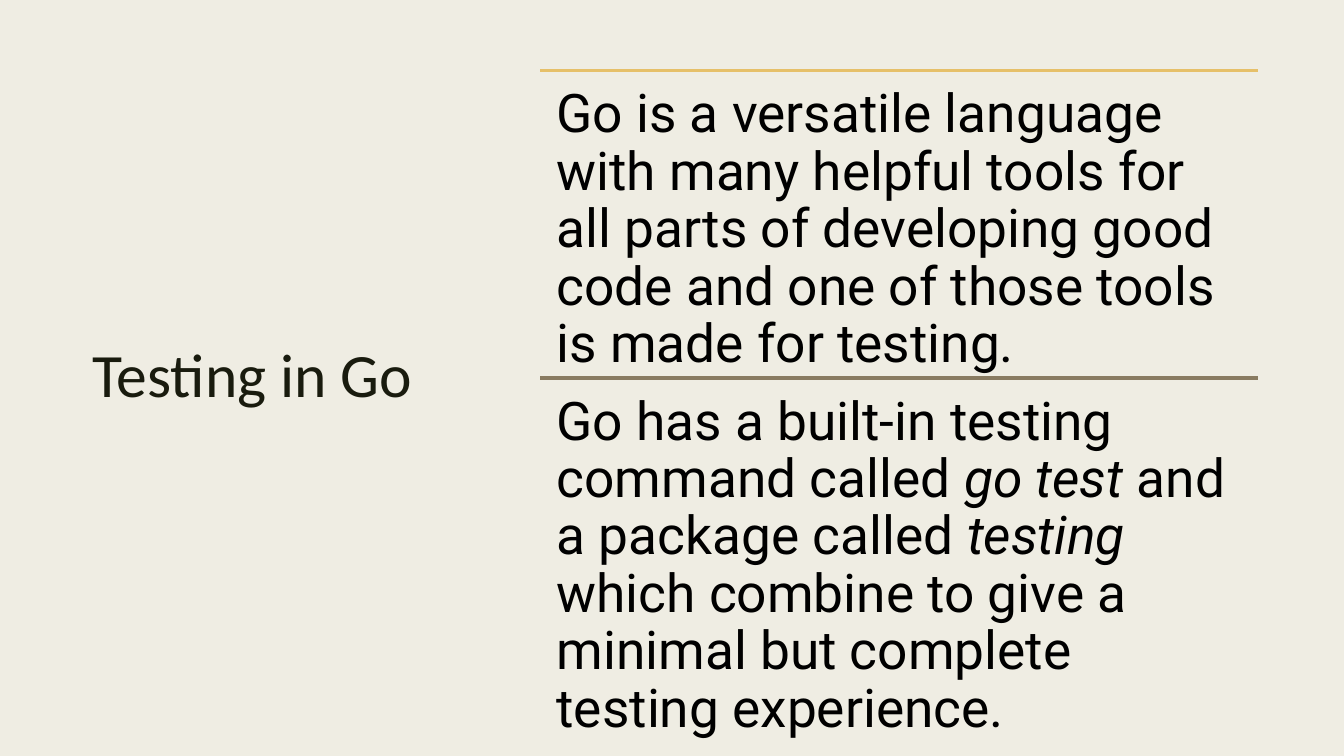
from lxml.etree import SubElement
from pptx import Presentation
from pptx.dml.color import RGBColor
from pptx.enum.shapes import MSO_CONNECTOR, MSO_SHAPE
from pptx.enum.text import MSO_ANCHOR, MSO_AUTO_SIZE, PP_ALIGN
from pptx.oxml.ns import qn
from pptx.util import Inches, Pt

COLORS = {
    "background": "EFEDE3",
    "title": "191B0E",
    "body": "000000",
    "gold": "E6C069",
    "brown": "897B61",
}
LEFT, TOP, WIDTH, HEIGHT = 5.36, 0.7, 7.12, 3.05
SECTIONS = [
    ("gold", [
        ("Go is a versatile language with many helpful tools for all parts of "
         "developing good code and one of those tools is made for testing.", False),
    ]),
    ("brown", [
        ("Go has a built-in testing command called ", False),
        ("go test ", True),
        ("and a package called ", False),
        ("testing", True),
        (" which combine to give a minimal but complete testing experience.", False),
    ]),
]


def style_run(r, font, size, color):
    r.font.name = font
    r.font.size = Pt(size)
    r.font.color.rgb = RGBColor.from_string(COLORS[color])


def place(sp, left, top, width, height):
    sp.left, sp.top = Inches(left), Inches(top)
    sp.width, sp.height = Inches(width), Inches(height)
    tf = sp.text_frame
    tf.word_wrap = True
    tf.auto_size = MSO_AUTO_SIZE.NONE
    return tf


prs = Presentation()
prs.slide_width, prs.slide_height = Inches(13.33), Inches(7.5)
s = prs.slides.add_slide(prs.slide_layouts.get_by_name("Two Content"))
title, *bodies = s.placeholders

backdrop = s.shapes.add_shape(MSO_SHAPE.RECTANGLE, 0, 0, prs.slide_width, prs.slide_height)
backdrop.shadow.inherit = False
backdrop.line.fill.background()
for fill in (s.background.fill, backdrop.fill):
    fill.solid()
    fill.fore_color.rgb = RGBColor.from_string(COLORS["background"])
title.element.addprevious(backdrop.element)

tf = place(title, 0.7, 0.7, 3.61, 6.1)
tf.text = "Testing in Go"
tf.vertical_anchor = MSO_ANCHOR.MIDDLE
p = tf.paragraphs[0]
p.alignment = PP_ALIGN.CENTER
p.line_spacing = 0.89
style_run(p.runs[0], "Calibri", 44, "title")

for i, (body, (color, parts)) in enumerate(zip(bodies, SECTIONS)):
    top = TOP + i * HEIGHT
    rule = s.shapes.add_connector(MSO_CONNECTOR.STRAIGHT, Inches(LEFT), Inches(top),
                                  Inches(LEFT + WIDTH), Inches(top))
    rule.line.color.rgb = RGBColor.from_string(COLORS[color])
    rule.line.width = Pt(2.75)
    SubElement(rule.element.spPr, qn("a:effectLst"))

    tf = place(body, LEFT, top, WIDTH, HEIGHT)
    tf.vertical_anchor = MSO_ANCHOR.TOP
    tf.margin_left = tf.margin_right = tf.margin_top = tf.margin_bottom = Inches(0.16)
    p = tf.paragraphs[0]
    p.line_spacing = 0.9
    p.space_before = Pt(0)
    pPr = p._p.get_or_add_pPr()
    pPr.set("marL", "0")
    pPr.set("indent", "0")
    SubElement(pPr, qn("a:buNone"))
    for text, italic in parts:
        r = p.add_run()
        r.text = text
        style_run(r, "Roboto", 38, "body")
        r.font.italic = italic

prs.save("out.pptx")
